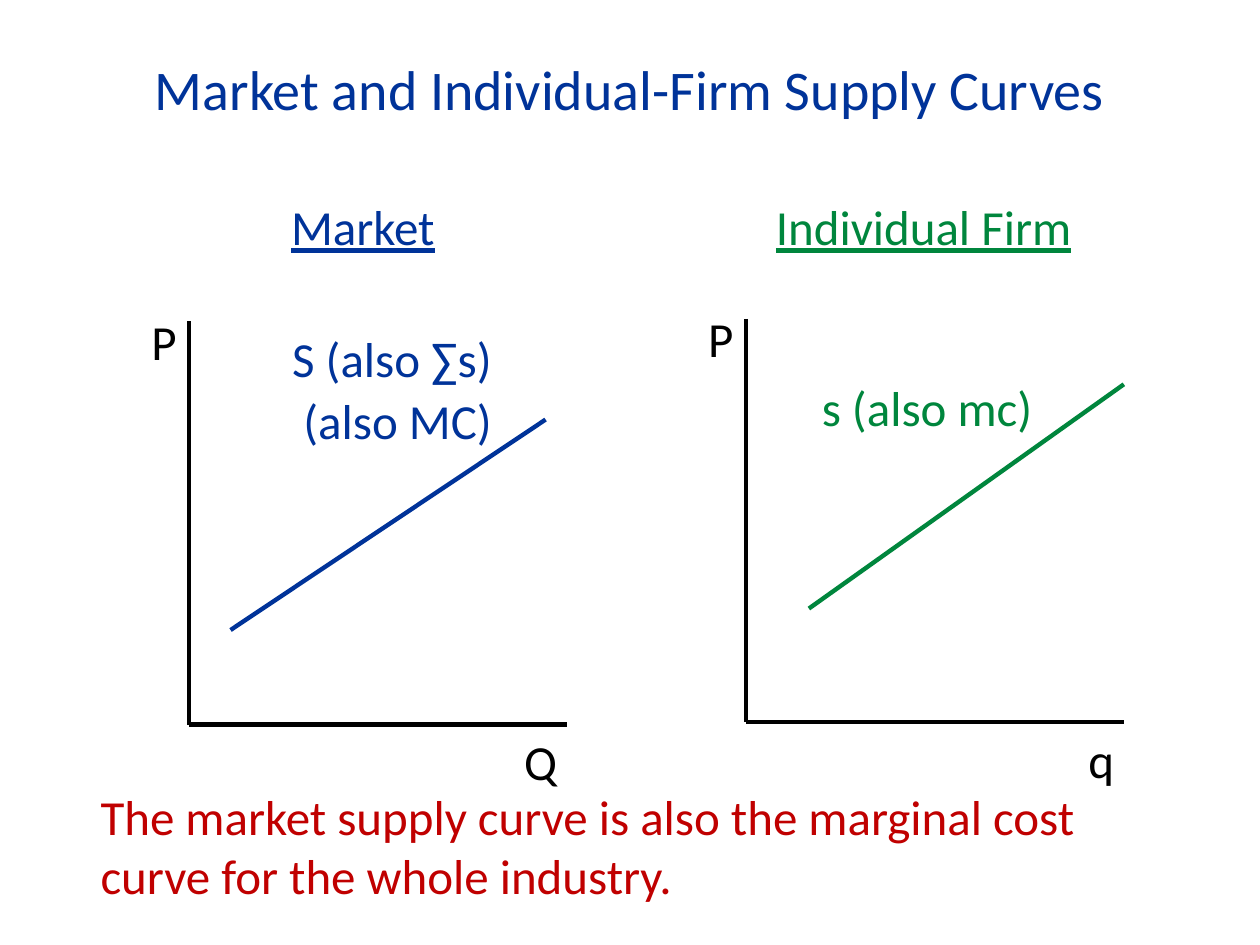
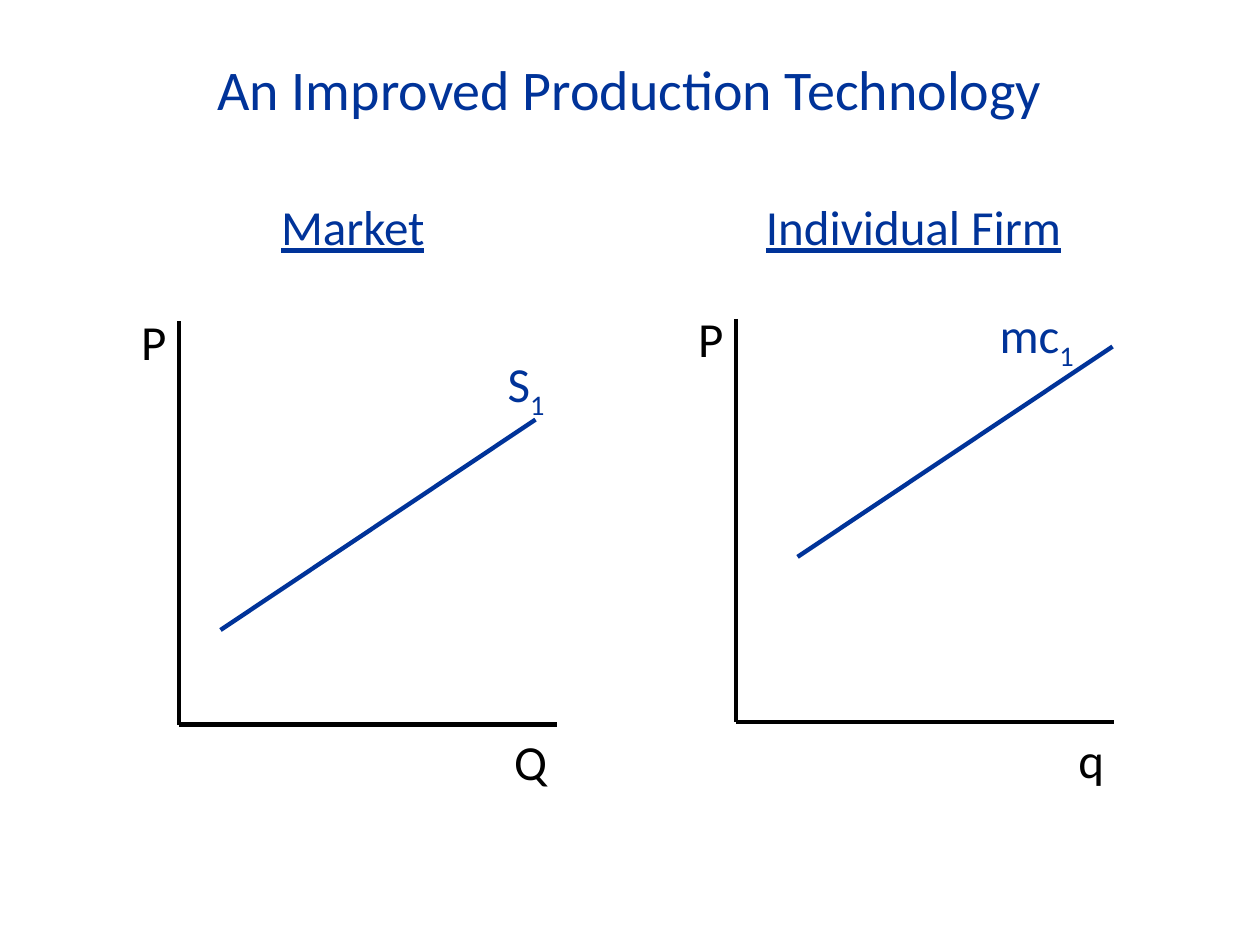
"""Build two slides that set market supply beside one firm's supply."""
from lxml import etree
from pptx import Presentation
from pptx.dml.color import RGBColor
from pptx.enum.shapes import MSO_CONNECTOR
from pptx.enum.text import MSO_ANCHOR, MSO_AUTO_SIZE, PP_ALIGN
from pptx.oxml.ns import qn
from pptx.util import Pt

PX = 9144
BLUE = RGBColor(0x00, 0x33, 0x99)
GREEN = RGBColor(0x00, 0x86, 0x3D)
RED = RGBColor(0xC0, 0x00, 0x00)
BLACK = RGBColor(0x00, 0x00, 0x00)
LEFT, MID, RIGHT = PP_ALIGN.LEFT, PP_ALIGN.CENTER, PP_ALIGN.RIGHT
TOP, CENTER = MSO_ANCHOR.TOP, MSO_ANCHOR.MIDDLE
GROW = MSO_AUTO_SIZE.SHAPE_TO_FIT_TEXT
STRAIGHT = MSO_CONNECTOR.STRAIGHT
BODY = {"name": "Calibri", "size": Pt(28)}
TITLE = {**BODY, "size": Pt(32)}
HEAD = {**BODY, "underline": True}
ROW = 57
WIDE, TALL = 300, 320


def put(item, values):
    """Set each named attribute on an item."""
    for name, value in values.items():
        setattr(item, name, value)


def write(shapes, box, words, color, align=RIGHT, style=BODY, anchor=TOP, sub=""):
    """Add a line of text, with an optional subscript at its end."""
    frame = shapes.add_textbox(*(n * PX for n in box)).text_frame
    put(frame, {"word_wrap": True, "auto_size": GROW, "vertical_anchor": anchor})
    para = frame.paragraphs[0]
    para.alignment = align
    for part in filter(None, (words, sub)):
        run = para.add_run()
        run.text = part
        put(run.font, style)
        run.font.color.rgb = color
    if sub:
        run._r.get_or_add_rPr().set("baseline", "-25000")


def line(shapes, start, end, color):
    """Draw a straight line between two points."""
    link = shapes.add_connector(STRAIGHT, *(n * PX for n in (*start, *end)))
    link.line.color.rgb = color
    link.line.width = Pt(2.5)
    etree.SubElement(link._element.spPr, qn("a:effectLst"))


def panel(shapes, x, y, head, span, color, amount):
    """Draw a heading and a pair of axes whose top left is at x, y."""
    line(shapes, (x, y), (x, y + TALL), BLACK)
    line(shapes, (x, y + TALL), (x + WIDE, y + TALL), BLACK)
    write(shapes, (x - 117, y - 13, 117, ROW), "P", BLACK)
    write(shapes, (x + 204, y + 321, 98, ROW), amount, BLACK)
    left, width = span
    write(shapes, (x + left, 151, width, ROW), head, color, MID, HEAD)


def market(shapes, x):
    """Draw the axes of the market."""
    panel(shapes, x, 255, "Market", (-58, 392), BLUE, "Q")


def firm(shapes, x, color):
    """Draw the axes of the firm."""
    panel(shapes, x, 253, "Individual Firm", (5, 272), color, "q")


def page(deck, title):
    """Add a blank slide with a title and return its shapes."""
    shapes = deck.slides.add_slide(deck.slide_layouts[6]).shapes
    write(shapes, (70, 38, 860, 64), title, BLUE, MID, TITLE, CENTER)
    return shapes


def supply(deck):
    """Build the slide on market and firm supply curves."""
    shapes = page(deck, "Market and Individual-Firm Supply Curves")
    market(shapes, 150)
    firm(shapes, 592, GREEN)
    write(shapes, (593, 295, 236, ROW), "s (also mc)", GREEN)
    line(shapes, (183, 500), (433, 333), BLUE)
    line(shapes, (642, 483), (892, 305), GREEN)
    for y, words in ((256, "S (also ∑s)"), (305, "(also MC)")):
        write(shapes, (108, y, 292, ROW), words, BLUE)
    note = "The market supply curve is also the marginal cost curve for the whole industry."
    write(shapes, (70, 619, 860, 104), note, RED, LEFT, anchor=CENTER)


def improve(deck):
    """Build the slide on better technology."""
    shapes = page(deck, "An Improved Production Technology")
    market(shapes.add_group_shape().shapes, 142)
    firm(shapes.add_group_shape().shapes, 584, BLUE)
    write(shapes, (734, 237, 128, ROW), "mc", BLUE, sub="1")
    line(shapes, (175, 500), (425, 333), BLUE)
    write(shapes, (150, 276, 292, ROW), "S", BLUE, sub="1")
    line(shapes, (633, 442), (883, 275), BLUE)


def main():
    """Build and save the deck."""
    deck = Presentation()
    put(deck, {"slide_width": 1000 * PX, "slide_height": 750 * PX})
    supply(deck)
    improve(deck)
    deck.save("out.pptx")


if __name__ == "__main__":
    main()
